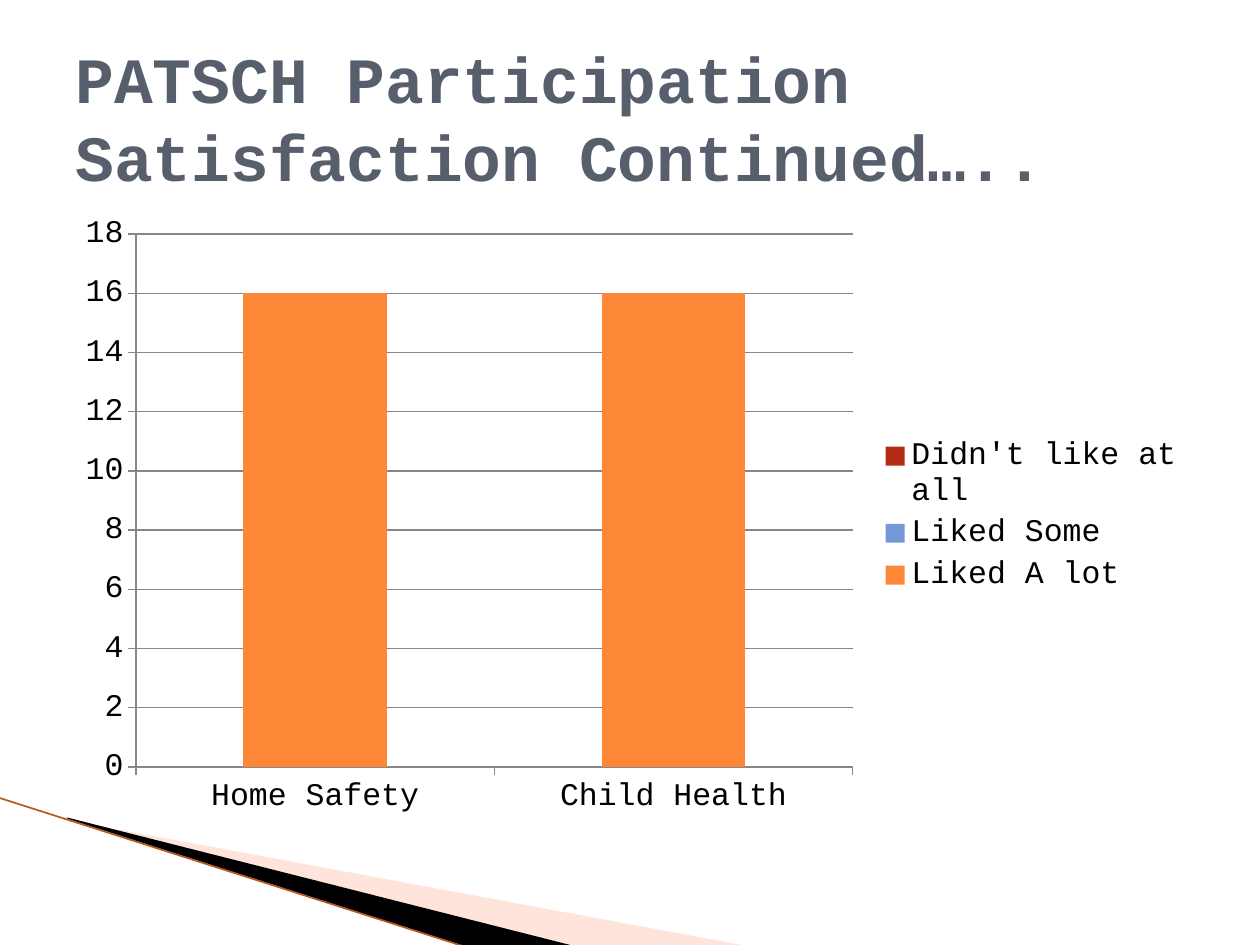
"""Build the participation satisfaction slide with its stacked column chart."""
from lxml import etree
from pptx import Presentation
from pptx import util as u
from pptx.chart import data
from pptx.dml.color import RGBColor
from pptx.enum import chart as ch, shapes, text
from pptx.oxml import ns

FONT = "Courier New"


def paint(fill, tone):
    fill.solid()
    fill.fore_color.rgb = RGBColor.from_string(tone)


deck = Presentation()
deck.slide_width, deck.slide_height = u.Cm(25.4), u.Cm(19.05)
slide = deck.slides.add_slide(deck.slide_layouts[6])

wedges = [
    ("FFBCA5", 40, [(1.4, 16.54), (15.11, 19.08), (11.58, 19.08), (1.4, 16.51)]),
    ("000000", 100, [(1.35, 16.48), (11.61, 19.08), (9.45, 19.1), (1.37, 16.51)]),
]
for tone, alpha, spots in wedges:
    spots = [(u.Cm(x), u.Cm(y)) for x, y in spots]
    pen = slide.shapes.build_freeform(*spots[0])
    pen.add_line_segments(spots[1:], close=True)
    wedge = pen.convert_to_shape()
    wedge.shadow.inherit = False
    wedge.line.fill.background()
    paint(wedge.fill, tone)
    if alpha < 100:
        shade = wedge.fill._xPr.find(".//" + ns.qn("a:srgbClr"))
        etree.SubElement(shade, ns.qn("a:alpha"), val=str(alpha * 1000))

edge = slide.shapes.add_connector(
    shapes.MSO_CONNECTOR.STRAIGHT, u.Cm(-0.03), u.Cm(16.08), u.Cm(9.42), u.Cm(19.1))
paint(edge.line.fill, "B45A1C")
edge.line.width = u.Pt(0.95)
etree.SubElement(edge._element.spPr, ns.qn("a:effectLst"))

votes = data.CategoryChartData()
votes.categories = ["Home Safety", "Child Health"]
marks = [
    ("Liked A lot", (16, 16), "FE8637"),
    ("Liked Some", (0, 0), "7598D9"),
    ("Didn't like at all", (0, 0), "B32C16"),
]
for name, vals, tone in marks:
    votes.add_series(name, vals)
chart = slide.shapes.add_chart(
    ch.XL_CHART_TYPE.COLUMN_STACKED, u.Cm(1.27), u.Cm(4.11), u.Cm(22.86), u.Cm(12.57),
    votes).chart
chart.has_title = False
chart.font.name = FONT
chart.font.size = u.Pt(18)
chart.font.color.rgb = RGBColor.from_string("000000")
chart.has_legend = True
chart.legend.position = ch.XL_LEGEND_POSITION.RIGHT
chart.legend.include_in_layout = False

plot = chart.plots[0]
plot.vary_by_categories = False
plot.gap_width = 150
plot.overlap = 100
for series, mark in zip(plot.series, marks):
    paint(series.format.fill, mark[2])

value = chart.value_axis
value.minimum_scale, value.maximum_scale, value.major_unit = 0, 18, 2
value.has_major_gridlines = True
paint(value.major_gridlines.format.line.fill, "878787")
for axis in (value, chart.category_axis):
    axis.major_tick_mark = ch.XL_TICK_MARK.OUTSIDE
    axis.minor_tick_mark = ch.XL_TICK_MARK.NONE
    paint(axis.format.line.fill, "878787")

title = slide.shapes.add_textbox(u.Cm(1.27), u.Cm(0.76), u.Cm(22.86), u.Cm(3.18))
frame = title.text_frame
frame.word_wrap = True
frame.vertical_anchor = text.MSO_ANCHOR.MIDDLE
frame.text = "PATSCH Participation Satisfaction Continued….."
font = frame.paragraphs[0].runs[0].font
font.name = FONT
font.size = u.Pt(36.9)
font.bold = True
font.color.rgb = RGBColor.from_string("575F6D")

deck.save("out.pptx")
